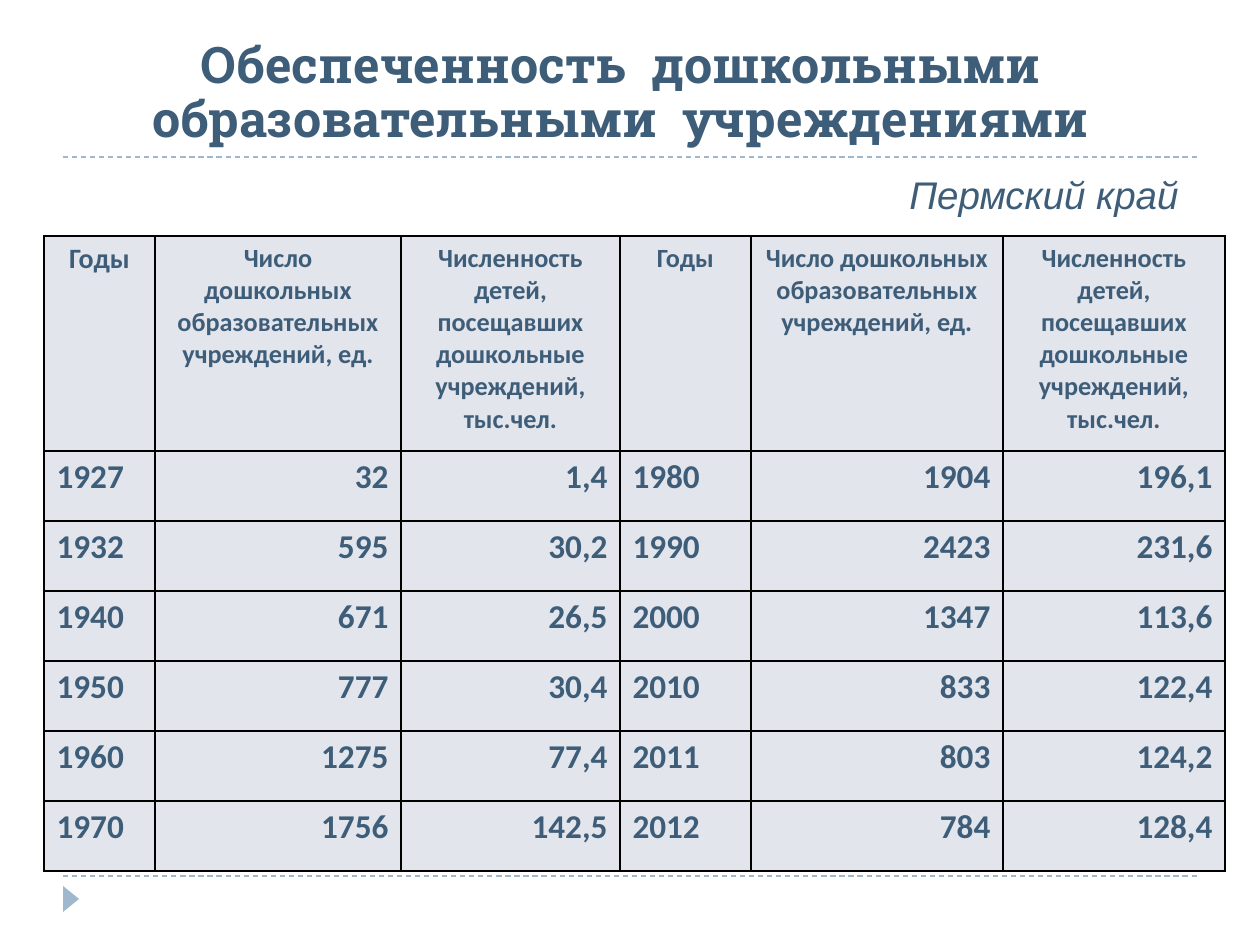
from lxml import etree
from pptx import Presentation
from pptx.dml.color import RGBColor
from pptx.enum.dml import MSO_LINE
from pptx.enum.shapes import MSO_CONNECTOR, MSO_SHAPE
from pptx.enum.text import MSO_ANCHOR, MSO_AUTO_SIZE, PP_ALIGN
from pptx.oxml.ns import qn
from pptx.util import Emu, Pt

LEFT, CENTER, RIGHT = PP_ALIGN.LEFT, PP_ALIGN.CENTER, PP_ALIGN.RIGHT
BOTTOM = MSO_ANCHOR.BOTTOM
NO_FIT = MSO_AUTO_SIZE.NONE
DASH = MSO_LINE.DASH
STRAIGHT = MSO_CONNECTOR.STRAIGHT
TRIANGLE = MSO_SHAPE.ISOSCELES_TRIANGLE

INK = RGBColor(0x3E, 0x5D, 0x78)
ACCENT = RGBColor(0x9F, 0xB8, 0xCD)
CELL_FILL = RGBColor(0xE3, 0xE5, 0xED)
BORDER = RGBColor(0x00, 0x00, 0x00)

COL_WIDTHS = [111, 246, 219, 131, 252, 222]
HEADER_HEIGHT, ROW_HEIGHT = 215, 70
HEADERS = [
    "Годы",
    "Число дошкольных образовательных учреждений, ед.",
    "Численность детей, посещавших дошкольные учреждений, тыс.чел.",
]
ROWS = [
    ["1927", "32", "1,4", "1980", "1904", "196,1"],
    ["1932", "595", "30,2", "1990", "2423", "231,6"],
    ["1940", "671", "26,5", "2000", "1347", "113,6"],
    ["1950", "777", "30,4", "2010", "833", "122,4"],
    ["1960", "1275", "77,4", "2011", "803", "124,2"],
    ["1970", "1756", "142,5", "2012", "784", "128,4"],
]


def px(n):
    """Turn pixels at 126 to the inch into EMU."""
    return Emu(round(n * 914400 / 126))


def style(p, font, size, align, bold=False, italic=False):
    """Format a whole paragraph in the ink colour."""
    p.alignment = align
    p.font.name, p.font.size = font, Pt(size)
    p.font.bold, p.font.italic = bold, italic
    p.font.color.rgb = INK


def add_rule(slide, x, y, w):
    """Draw a dashed horizontal rule."""
    line = slide.shapes.add_connector(STRAIGHT, px(x), px(y), px(x + w), px(y))
    line.line.color.rgb = ACCENT
    line.line.width = Pt(0.75)
    line.line.dash_style = DASH
    etree.SubElement(line._element.spPr, qn("a:effectLst"))


def add_frame(slide, x, y, w, h):
    """Draw the rules above and below the content and the corner marker."""
    for rule_y in (y, y + h):
        add_rule(slide, x, rule_y, w)
    sp = slide.shapes.add_shape(TRIANGLE, px(x - 5), px(y + h + 15), px(26), px(16))
    sp.rotation = 90
    sp.shadow.inherit = False
    sp.fill.solid()
    sp.fill.fore_color.rgb = ACCENT
    sp.line.fill.background()


def add_title(slide, x, y, w, h):
    """Place and format the title placeholder."""
    sp = slide.shapes.title
    sp.left, sp.top, sp.width, sp.height = px(x), px(y), px(w), px(h)
    tf = sp.text_frame
    tf.auto_size = NO_FIT
    tf.vertical_anchor = BOTTOM
    p = tf.paragraphs[0]
    p.text = "Обеспеченность  дошкольными образовательными  учреждениями"
    p.line_spacing = 0.9
    style(p, "Roboto Slab", 28.8, CENTER, bold=True)


def add_region(slide, x, y, w, h):
    """Add the region name above the table."""
    tf = slide.shapes.add_textbox(px(x), px(y), px(w), px(h)).text_frame
    tf.word_wrap = True
    p = tf.paragraphs[0]
    p.text = "Пермский край"
    style(p, "Arial", 22, LEFT, italic=True)


def set_borders(cell, widths):
    """Give a cell solid borders, with widths in points by side."""
    tcPr = cell._tc.get_or_add_tcPr()
    for side, width in widths.items():
        ln = etree.SubElement(tcPr, qn(f"a:ln{side}"), w=str(Pt(width)))
        fill = etree.SubElement(ln, qn("a:solidFill"))
        etree.SubElement(fill, qn("a:srgbClr"), val=str(BORDER))


def fill_cell(cell, text, size, align, widths):
    """Write and format one table cell."""
    set_borders(cell, widths)
    cell.fill.solid()
    cell.fill.fore_color.rgb = CELL_FILL
    p = cell.text_frame.paragraphs[0]
    p.text = text
    style(p, "Calibri", size, align, bold=True)


def add_table(slide, x, y):
    """Add the table of two three-column halves with a thicker divider."""
    data = [HEADERS * 2] + ROWS
    heights = [HEADER_HEIGHT] + [ROW_HEIGHT] * len(ROWS)
    table = slide.shapes.add_table(
        len(data), len(COL_WIDTHS), px(x), px(y), px(sum(COL_WIDTHS)), px(sum(heights))
    ).table
    table.horz_banding = False
    for col, width in zip(table.columns, COL_WIDTHS):
        col.width = px(width)
    for r, (values, height) in enumerate(zip(data, heights)):
        table.rows[r].height = px(height)
        for c, text in enumerate(values):
            is_year = c % len(HEADERS) == 0
            if r == 0:
                size, align = (16 if c == 0 else 15), CENTER
            else:
                size, align = 19, (LEFT if is_year else RIGHT)
            widths = {
                "L": 1.5 if c == 3 else 1,
                "R": 1.5 if c == 2 else 1,
                "T": 1,
                "B": 1,
            }
            fill_cell(table.cell(r, c), text, size, align, widths)


def main():
    """Build and save the slide."""
    prs = Presentation()
    prs.slide_width, prs.slide_height = px(1260), px(945)
    slide = prs.slides.add_slide(prs.slide_layouts[5])
    add_frame(slide, 63, 157, 1134, 719)
    add_title(slide, 54, 26, 1134, 129)
    add_table(slide, 44, 236)
    add_region(slide, 897, 165, 307, 59)
    prs.save("out.pptx")


if __name__ == "__main__":
    main()
